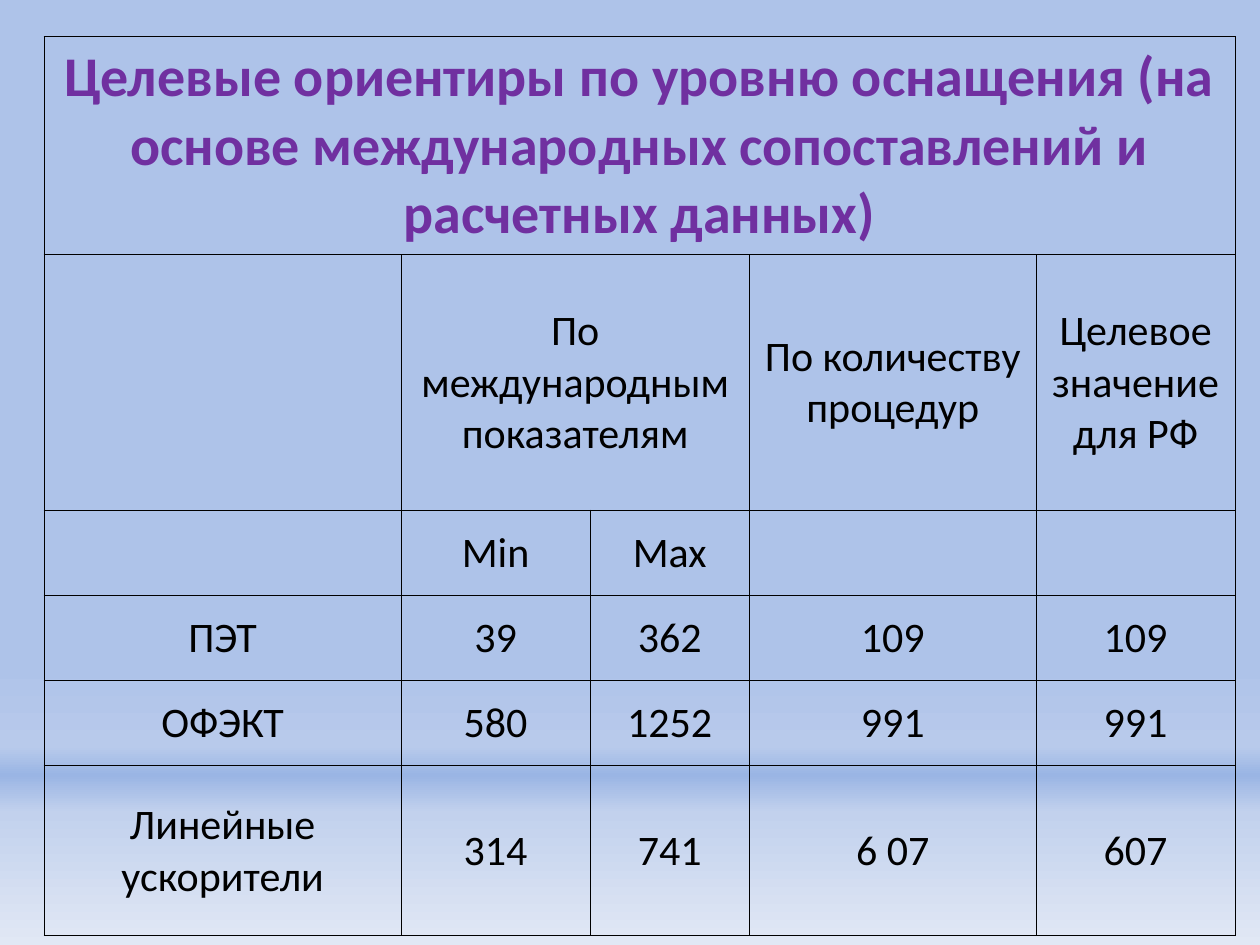
from dataclasses import dataclass

from pptx import Presentation
from pptx.dml.color import RGBColor
from pptx.enum.text import MSO_ANCHOR, PP_ALIGN
from pptx.oxml.ns import qn
from pptx.oxml.xmlchemy import OxmlElement
from pptx.util import Pt


@dataclass(frozen=True)
class Theme:
    font: str = "Calibri"
    title: str = "7030A0"
    ink: str = "000000"
    big: int = 32
    body: int = 24
    line: float = 0.5
    inset: float = 0.72
    stops: tuple = ((70, "AEC3E9"), (79, "B8CAEB"), (82, "9AB5E4"),
                    (86, "C2D1ED"), (100, "E1E8F5"))


def add(parent, tag, **attrs):
    """Append an XML child with the given attributes."""
    child = OxmlElement(tag)
    for name, value in attrs.items():
        child.set(name, str(value))
    parent.append(child)
    return child


class Page:
    """Holds the theme and the current slide."""

    def __init__(self, slide, theme):
        self.slide, self.theme = slide, theme

    def backdrop(self):
        fill = self.slide.background.fill
        fill.gradient()
        fill.gradient_angle = 270
        stops = self.slide.element.find(".//" + qn("a:gsLst"))
        for stop in list(stops):
            stops.remove(stop)
        for place, color in self.theme.stops:
            add(add(stops, "a:gs", pos=place * 1000), "a:srgbClr", val=color)

    def table(self, left, top, widths, heights, rows, spans):
        """Draw a ruled table; spans maps (row, column) to a column count."""
        frame = self.slide.shapes.add_table(
            len(heights), len(widths), Pt(left), Pt(top),
            Pt(sum(widths)), Pt(sum(heights)))
        table = frame.table
        table.first_row = table.horz_banding = False
        for col, width in zip(table.columns, widths):
            col.width = Pt(width)
        for row, height in zip(table.rows, heights):
            row.height = Pt(height)
        for (row, col), count in spans.items():
            table.cell(row, col).merge(table.cell(row, col + count - 1))
        for r, texts in enumerate(rows):
            for c, text in enumerate(texts):
                cell = table.cell(r, c)
                self.rule(cell)
                cell.fill.background()
                if text:
                    self.text(cell, text, head=r == 0)

    def rule(self, cell):
        """Draw a thin line on all four sides of a cell."""
        props = cell._tc.get_or_add_tcPr()
        for side in "LRTB":
            line = add(props, f"a:ln{side}", w=Pt(self.theme.line))
            add(add(line, "a:solidFill"), "a:srgbClr", val=self.theme.ink)

    def text(self, cell, text, head):
        theme = self.theme
        cell.vertical_anchor = MSO_ANCHOR.MIDDLE
        cell.margin_left = cell.margin_right = cell.margin_top = Pt(theme.inset)
        cell.margin_bottom = 0
        para = cell.text_frame.paragraphs[0]
        para.alignment = PP_ALIGN.CENTER
        run = para.add_run()
        run.text = text
        font = run.font
        font.name, font.bold = theme.font, head
        font.size = Pt(theme.big if head else theme.body)
        font.color.rgb = RGBColor.from_string(theme.title if head else theme.ink)


def main():
    deck = Presentation()
    deck.slide_width, deck.slide_height = Pt(720), Pt(540)
    page = Page(deck.slides.add_slide(deck.slide_layouts[6]), Theme())
    page.backdrop()

    title = ("Целевые ориентиры по уровню оснащения "
             "(на основе международных сопоставлений и расчетных данных)")
    rows = [
        [title, "", "", "", ""],
        ["", "По международным показателям", "", "По количеству процедур",
         "Целевое значение для РФ"],
        ["", "Min", "Max", "", ""],
        ["ПЭТ", "39", "362", "109", "109"],
        ["ОФЭКТ", "580", "1252", "991", "991"],
        ["Линейные ускорители", "314", "741", "6 07", "607"],
    ]
    unit = 48.65
    heights = [124.5] + [unit * lines for lines in (3, 1, 1, 1, 2)]
    widths = [204, 108, 91, 164, 113.5]
    page.table(25.2, 21, widths, heights, rows, {(0, 0): 5, (1, 1): 2})
    deck.save("out.pptx")


if __name__ == "__main__":
    main()
